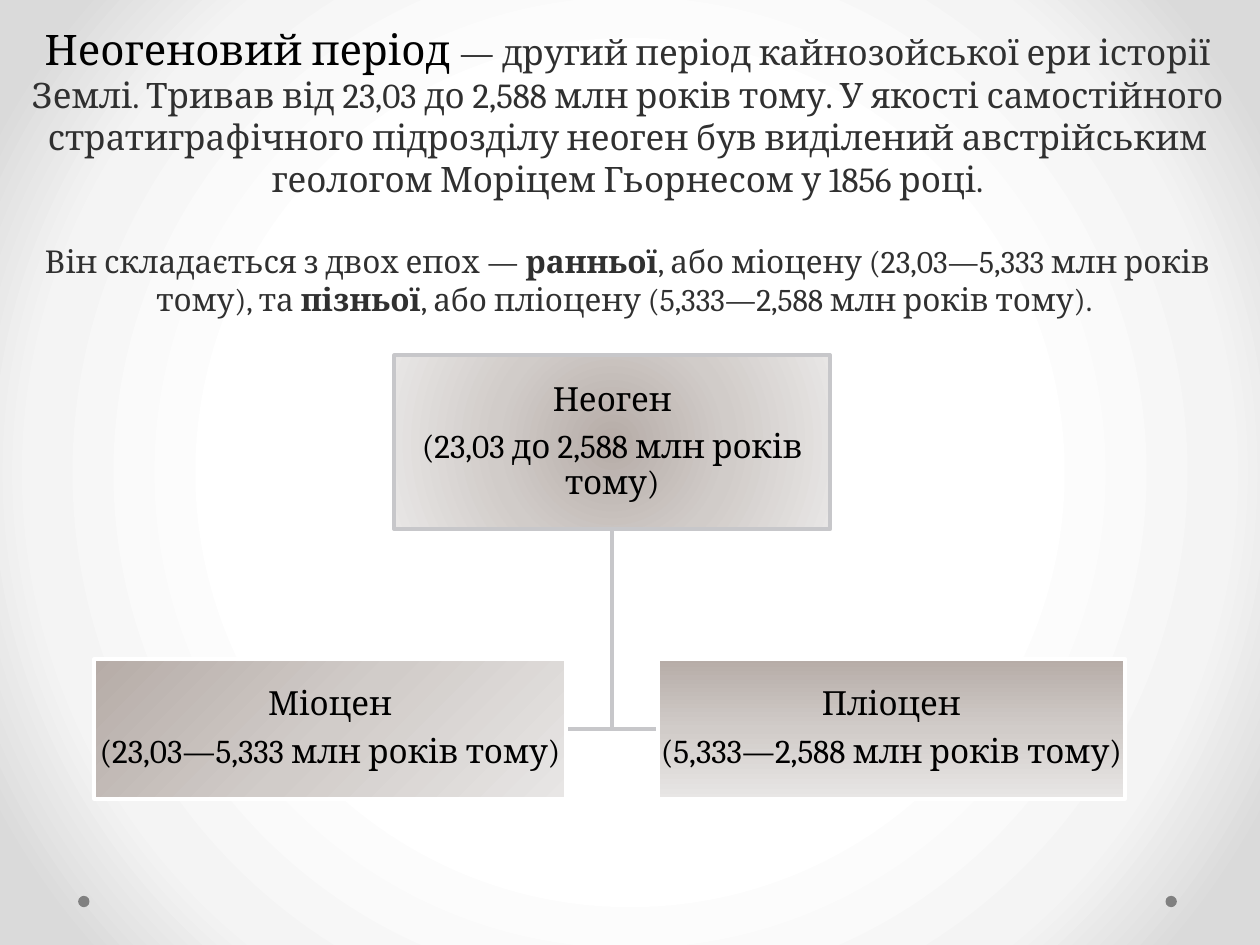
from copy import deepcopy
from dataclasses import dataclass

from lxml.etree import SubElement
from pptx import Presentation
from pptx.dml.color import RGBColor
from pptx.enum.shapes import MSO_SHAPE
from pptx.enum.text import MSO_ANCHOR, MSO_AUTO_SIZE, PP_ALIGN
from pptx.oxml.ns import qn
from pptx.util import Inches, Pt

FONT = "Cambria"
COLORS = {
    "black": "000000",
    "body": "303030",
    "dot": "808080",
    "rule": "C7C7CA",
    "white": "FFFFFF",
}
BACKGROUND_STOPS = [(50, "FFFFFF"), (76, "F4F4F4"), (92, "DADADA")]
BOX_STOPS = [(0, "B6ACA7"), (50, "D1CCC9"), (100, "E8E6E5")]
LINE_WIDTH = Pt(2.25)


@dataclass
class PeriodBox:
    name: str
    dates: str
    left: float
    top: float
    width: float
    height: float
    outline: str
    angle: int | None = None


@dataclass
class TitleRun:
    text: str
    size: int = 18
    bold: bool = False
    color: str = "body"
    breaks: int = 0


NEOGENE = PeriodBox("Неоген", "(23,03 до 2,588 млн років тому)",
                    3.13, 2.82, 3.46, 1.38, "rule")
EPOCHS = [
    PeriodBox("Міоцен", "(23,03—5,333 млн років тому)",
              0.75, 5.23, 3.74, 1.11, "white", 45),
    PeriodBox("Пліоцен", "(5,333—2,588 млн років тому)",
              5.22, 5.23, 3.71, 1.11, "white", 90),
]
TITLE_RUNS = [
    TitleRun("Неогеновий період ", 24, color="black"),
    TitleRun("— другий період кайнозойської ери історії Землі. Тривав від 23,03 "
             "до 2,588 млн років тому. У якості самостійного стратиграфічного "
             "підрозділу неоген був виділений австрійським геологом Моріцем "
             "Гьорнесом у 1856 році.", 20, breaks=2),
    TitleRun("Він складається з двох епох — "),
    TitleRun("ранньої", bold=True),
    TitleRun(", або міоцену (23,03—5,333 млн років тому), та "),
    TitleRun("пізньої", bold=True),
    TitleRun(", або пліоцену (5,333—2,588 млн років тому). "),
]


def color(name: str) -> RGBColor:
    return RGBColor.from_string(COLORS[name])


def set_attributes(target, values: dict) -> None:
    for name, value in values.items():
        setattr(target, name, value)


def apply_gradient(fill, properties, stops: list, angle: int | None = None) -> None:
    """Give a fill a linear gradient, or a centred circular one without an angle."""
    fill.solid()
    solid = properties.find(qn("a:solidFill"))
    gradient = SubElement(properties, qn("a:gradFill"), rotWithShape="1")
    stop_list = SubElement(gradient, qn("a:gsLst"))
    for position, value in stops:
        stop = SubElement(stop_list, qn("a:gs"), pos=str(position * 1000))
        SubElement(stop, qn("a:srgbClr"), val=value)
    if angle is None:
        path = SubElement(gradient, qn("a:path"), {"path": "circle"})
        SubElement(path, qn("a:fillToRect"), {side: "50000" for side in "ltrb"})
    else:
        SubElement(gradient, qn("a:lin"), ang=str(angle * 60000), scaled="0")
    properties.replace(solid, gradient)


def write_title(slide) -> None:
    title = slide.shapes.title
    set_attributes(title, {"left": Inches(0), "top": Inches(0.05),
                           "width": Inches(9.96), "height": Inches(2.52)})
    set_attributes(title.text_frame, {"word_wrap": True,
                                      "auto_size": MSO_AUTO_SIZE.NONE,
                                      "vertical_anchor": MSO_ANCHOR.BOTTOM})
    paragraph = title.text_frame.paragraphs[0]
    paragraph.alignment = PP_ALIGN.CENTER
    for item in TITLE_RUNS:
        run = paragraph.add_run()
        run.text = item.text
        set_attributes(run.font, {"name": FONT, "size": Pt(item.size), "bold": item.bold})
        run.font.color.rgb = color(item.color)
        for _ in range(item.breaks):
            paragraph.add_line_break()
            paragraph._p[-1].append(deepcopy(run.font._element))


def draw_dot(slide, left: float) -> None:
    dot = slide.shapes.add_shape(MSO_SHAPE.OVAL, Inches(left), Inches(7.11),
                                 Inches(0.09), Inches(0.09))
    dot.shadow.inherit = False
    dot.fill.solid()
    dot.fill.fore_color.rgb = color("dot")
    dot.line.fill.background()


def draw_elbow(slide, parent: PeriodBox, child: PeriodBox) -> None:
    """Run down from the parent's middle, then sideways to the child's near edge."""
    start_x = parent.left + parent.width / 2
    start_y = parent.top + parent.height
    end_x = child.left if child.left > start_x else child.left + child.width
    end_y = child.top + child.height / 2
    builder = slide.shapes.build_freeform(Inches(start_x), Inches(start_y))
    builder.add_line_segments([(Inches(start_x), Inches(end_y)),
                               (Inches(end_x), Inches(end_y))], close=False)
    elbow = builder.convert_to_shape()
    elbow.shadow.inherit = False
    elbow.fill.background()
    elbow.line.color.rgb = color("rule")
    elbow.line.width = LINE_WIDTH


def draw_box(slide, box: PeriodBox) -> None:
    shape = slide.shapes.add_shape(MSO_SHAPE.RECTANGLE, Inches(box.left), Inches(box.top),
                                   Inches(box.width), Inches(box.height))
    shape.shadow.inherit = False
    apply_gradient(shape.fill, shape.element.spPr, BOX_STOPS, box.angle)
    shape.line.color.rgb = color(box.outline)
    shape.line.width = LINE_WIDTH
    frame = shape.text_frame
    margins = {f"margin_{side}": Inches(0.01) for side in ("left", "top", "right", "bottom")}
    set_attributes(frame, {"word_wrap": True, "vertical_anchor": MSO_ANCHOR.MIDDLE, **margins})
    frame.text = f"{box.name}\n{box.dates}"
    for paragraph in frame.paragraphs:
        set_attributes(paragraph, {"alignment": PP_ALIGN.CENTER, "line_spacing": 0.9,
                                   "space_after": Pt(6.65)})
        font = paragraph.runs[0].font
        set_attributes(font, {"name": FONT, "size": Pt(19)})
        font.color.rgb = color("black")


def main() -> None:
    presentation = Presentation()
    set_attributes(presentation, {"slide_width": Inches(10), "slide_height": Inches(7.5)})
    slide = presentation.slides.add_slide(presentation.slide_layouts[5])
    background_fill = slide.background.fill
    background_fill.solid()
    background = slide.element.find(".//" + qn("p:bgPr"))
    apply_gradient(background_fill, background, BACKGROUND_STOPS)
    for left in (9.25, 0.62):
        draw_dot(slide, left)
    write_title(slide)
    for epoch in EPOCHS:
        draw_elbow(slide, NEOGENE, epoch)
    for box in (NEOGENE, *EPOCHS):
        draw_box(slide, box)
    presentation.save("out.pptx")


if __name__ == "__main__":
    main()
